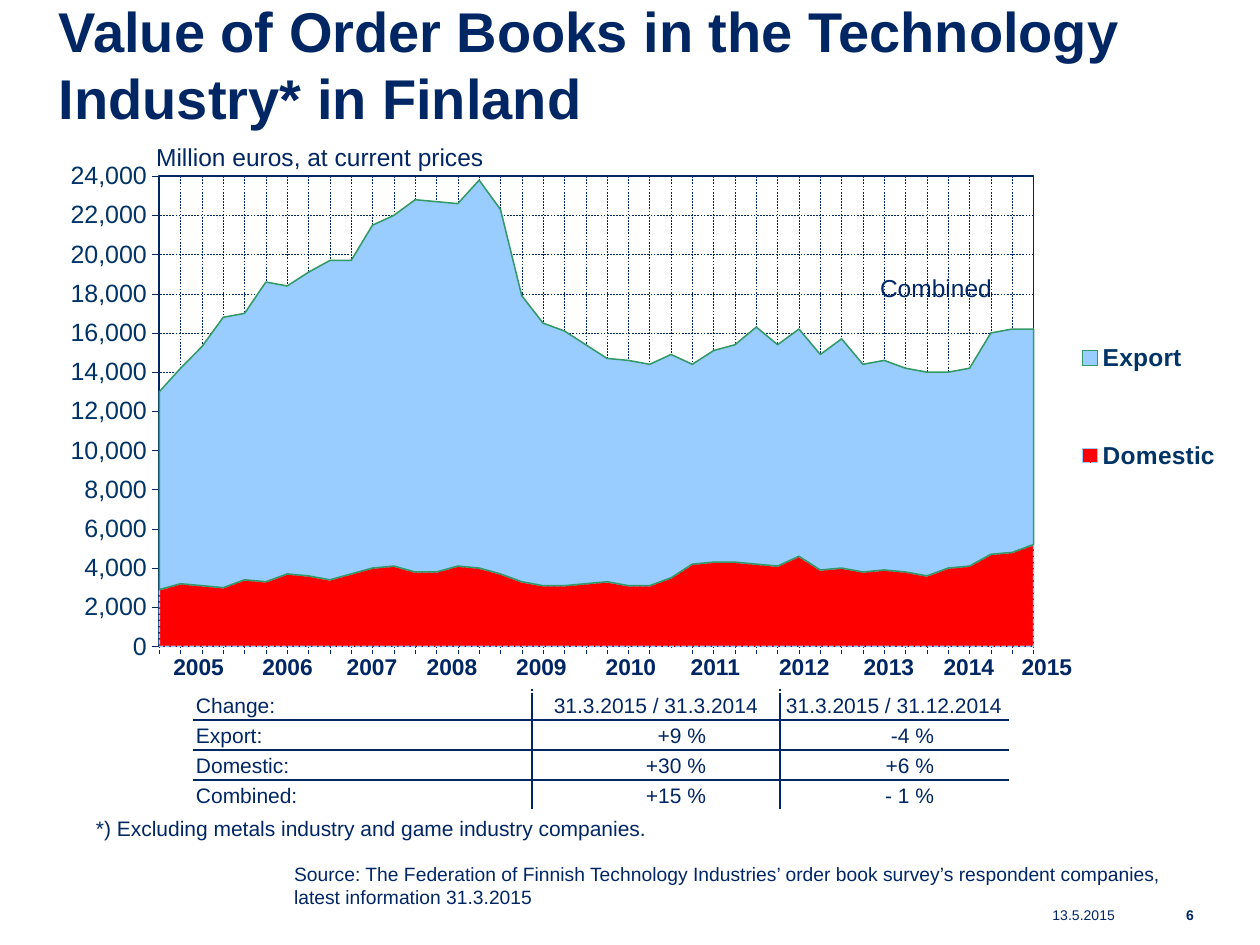
from lxml import etree
from pptx import Presentation
from pptx import util as u
from pptx.chart.data import CategoryChartData
from pptx.dml.color import RGBColor
from pptx.enum import chart as ch, dml, text
from pptx.oxml import parse_xml
from pptx.oxml.ns import nsdecls, qn

PX = 914400 / 126
NAVY, TEAL, FONT = "002664", "003366", "Arial"
LEFT, CENTER, RIGHT = text.PP_ALIGN.LEFT, text.PP_ALIGN.CENTER, text.PP_ALIGN.RIGHT
TOP, MIDDLE, BOTTOM = text.MSO_ANCHOR.TOP, text.MSO_ANCHOR.MIDDLE, text.MSO_ANCHOR.BOTTOM

DOMESTIC = [2900, 3200, 3100, 3000, 3400, 3300, 3700, 3600, 3400, 3700, 4000,
            4100, 3800, 3800, 4100, 4000, 3700, 3300, 3100, 3100, 3200, 3300,
            3100, 3100, 3500, 4200, 4300, 4300, 4200, 4100, 4600, 3900, 4000,
            3800, 3900, 3800, 3600, 4000, 4100, 4700, 4800, 5200]
EXPORT = [10100, 11000, 12200, 13800, 13600, 15300, 14700, 15500, 16300, 16000,
          17500, 17900, 19000, 18900, 18500, 19800, 18600, 14600, 13400, 13000,
          12200, 11400, 11500, 11300, 11400, 10200, 10800, 11100, 12100, 11300,
          11600, 11000, 11700, 10600, 10700, 10400, 10400, 10000, 10100, 11300,
          11400, 11000]
CHANGES = [["Change:", "31.3.2015 / 31.3.2014", "31.3.2015 / 31.12.2014"],
           ["Export:", "+9 %", "-4 %"],
           ["Domestic:", "+30 %", "+6 %"],
           ["Combined:", "+15 %", "- 1 %"]]


def px(length):
    return u.Emu(round(length * PX))


def rgb(code):
    return RGBColor.from_string(code)


def style_font(font, size, color=NAVY, bold=False):
    font.name, font.size, font.bold = FONT, u.Pt(size), bold
    font.color.rgb = rgb(color)


def style_line(line, color, width, dash=None):
    line.color.rgb = rgb(color)
    line.width = u.Pt(width)
    if dash:
        line.dash_style = dash


def write(frame, lines, size, align=LEFT, bold=False):
    frame.text = "\n".join(lines)
    for paragraph in frame.paragraphs:
        paragraph.alignment = align
        for run in paragraph.runs:
            style_font(run.font, size, bold=bold)


def add_text(slide, box, lines, size, align=LEFT, bold=False, wrap=True, anchor=TOP):
    frame = slide.shapes.add_textbox(*map(px, box)).text_frame
    frame.word_wrap = wrap
    frame.vertical_anchor = anchor
    frame.margin_left = frame.margin_right = px(12)
    frame.margin_top = frame.margin_bottom = px(6)
    write(frame, lines, size, align, bold)


def manual_layout(x, y, w, h, inner=False):
    target = '<c:layoutTarget val="inner"/>' if inner else ""
    return parse_xml(
        f'<c:layout {nsdecls("c")}><c:manualLayout>{target}'
        '<c:xMode val="edge"/><c:yMode val="edge"/>'
        f'<c:x val="{x}"/><c:y val="{y}"/><c:w val="{w}"/><c:h val="{h}"/>'
        '</c:manualLayout></c:layout>')


def add_order_chart(slide, box):
    data = CategoryChartData(number_format="#,##0")
    data.categories = [str(quarter + 1) for quarter in range(len(EXPORT))]
    data.add_series("Domestic", DOMESTIC)
    data.add_series("Export", EXPORT)
    chart = slide.shapes.add_chart(ch.XL_CHART_TYPE.AREA_STACKED, *map(px, box), data).chart
    style_font(chart.font, 14)
    chart.has_title = False

    looks = [("FF0000", "99CCFF", dml.MSO_LINE.SQUARE_DOT), ("99CCFF", "339966", None)]
    for series, (fill, outline, dash) in zip(chart.plots[0].series, looks):
        series.format.fill.solid()
        series.format.fill.fore_color.rgb = rgb(fill)
        style_line(series.format.line, outline, 0.88, dash)

    quarters, values = chart.category_axis, chart.value_axis
    for axis in (quarters, values):
        axis.has_major_gridlines = True
        style_line(axis.major_gridlines.format.line, NAVY, 0.25, dml.MSO_LINE.DASH)
        style_line(axis.format.line, NAVY, 0.22)
        axis.major_tick_mark = ch.XL_TICK_MARK.OUTSIDE
        axis.minor_tick_mark = ch.XL_TICK_MARK.NONE
    quarters.tick_label_position = ch.XL_TICK_LABEL_POSITION.NONE
    values.minimum_scale, values.maximum_scale, values.major_unit = 0, 24000, 2000
    values.tick_labels.number_format = "#,##0"
    values.tick_labels.number_format_is_linked = False
    style_font(values.tick_labels.font, 14.3, TEAL)
    values._element.find(qn("c:crossBetween")).set("val", "midCat")

    chart.has_legend = True
    legend = chart.legend
    legend.position = ch.XL_LEGEND_POSITION.RIGHT
    legend.include_in_layout = False
    style_font(legend.font, 14, TEAL, True)
    for old in legend._element.findall(qn("c:layout")):
        legend._element.remove(old)
    legend._element.find(qn("c:legendPos")).addnext(manual_layout(0.85, 0.24, 0.14, 0.48))

    plot_area = chart._chartSpace.chart.plotArea
    for old in plot_area.findall(qn("c:layout")):
        plot_area.remove(old)
    plot_area.insert(0, manual_layout(0.096, 0.062, 0.728, 0.852, inner=True))
    plot_area.append(parse_xml(
        f'<c:spPr {nsdecls("c", "a")}><a:noFill/><a:ln w="12700"><a:solidFill>'
        f'<a:srgbClr val="{NAVY}"/></a:solidFill></a:ln></c:spPr>'))


def add_border(cell, side):
    border = etree.SubElement(cell._tc.get_or_add_tcPr(), qn(f"a:{side}"), w="12700")
    fill = etree.SubElement(border, qn("a:solidFill"))
    etree.SubElement(fill, qn("a:srgbClr"), val=NAVY)


def add_plain_table(slide, corner, widths, height, count):
    box = (*corner, sum(widths), height * count)
    table = slide.shapes.add_table(count, len(widths), *map(px, box)).table
    table.first_row = table.horz_banding = False
    for column, width in zip(table.columns, widths):
        column.width = px(width)
    for row in table.rows:
        row.height = px(height)
    return table


def add_change_table(slide, corner):
    widths = [338, 248, 228]
    table = add_plain_table(slide, corner, widths, 30, len(CHANGES))
    last_row, last_column = len(CHANGES) - 1, len(widths) - 1
    for r, row in enumerate(CHANGES):
        for c, label in enumerate(row):
            cell = table.cell(r, c)
            figure = r > 0 and c > 0
            cell.margin_left = cell.margin_top = cell.margin_bottom = px(2)
            cell.margin_right = px(74 if figure else 2)
            cell.vertical_anchor = BOTTOM
            write(cell.text_frame, [label], 12, RIGHT if figure else CENTER if c else LEFT)
            sides = {"lnL": c > 0, "lnR": c < last_column, "lnT": r > 0, "lnB": r < last_row}
            for side, inside in sides.items():
                if inside:
                    add_border(cell, side)
            cell.fill.background()


def add_year_table(slide, corner):
    widths = [89, 89, 80, 80, 99, 80, 89, 89, 80, 80, 76]
    table = add_plain_table(slide, corner, widths, 43, 1)
    for c in range(len(widths)):
        cell = table.cell(0, c)
        cell.margin_left = cell.margin_right = 0
        cell.fill.background()
        write(cell.text_frame, [str(2005 + c)], 13, CENTER, True)


def add_footer(slide, top):
    add_text(slide, (769, top, 358, 30), ["13.5.2015"], 8, RIGHT, anchor=MIDDLE)
    add_text(slide, (1126, top, 80, 30), ["6"], 8, RIGHT, True, anchor=MIDDLE)


def main():
    deck = Presentation()
    deck.slide_width, deck.slide_height = px(1260), px(945)
    slide = deck.slides.add_slide(deck.slide_layouts[6])
    add_order_chart(slide, (44, 142, 1201, 552))
    add_text(slide, (47, -10, 1207, 147),
             ["Value of Order Books in the Technology Industry* in Finland"], 32,
             bold=True, anchor=MIDDLE)
    add_text(slide, (144, 136, 352, 42), ["Million euros, at current prices"], 14, CENTER, wrap=False)
    add_text(slide, (868, 267, 159, 44), ["Combined"], 14)
    add_change_table(slide, (194, 690))
    add_year_table(slide, (154, 649))
    add_text(slide, (84, 810, 1121, 37),
             ["*) Excluding metals industry and game industry companies."], 12)
    add_text(slide, (282, 856, 903, 58),
             ["Source: The Federation of Finnish Technology Industries’ order book "
              "survey’s respondent companies,", "latest information 31.3.2015"], 11, wrap=False)
    add_footer(slide, 900)
    deck.save("out.pptx")


if __name__ == "__main__":
    main()
